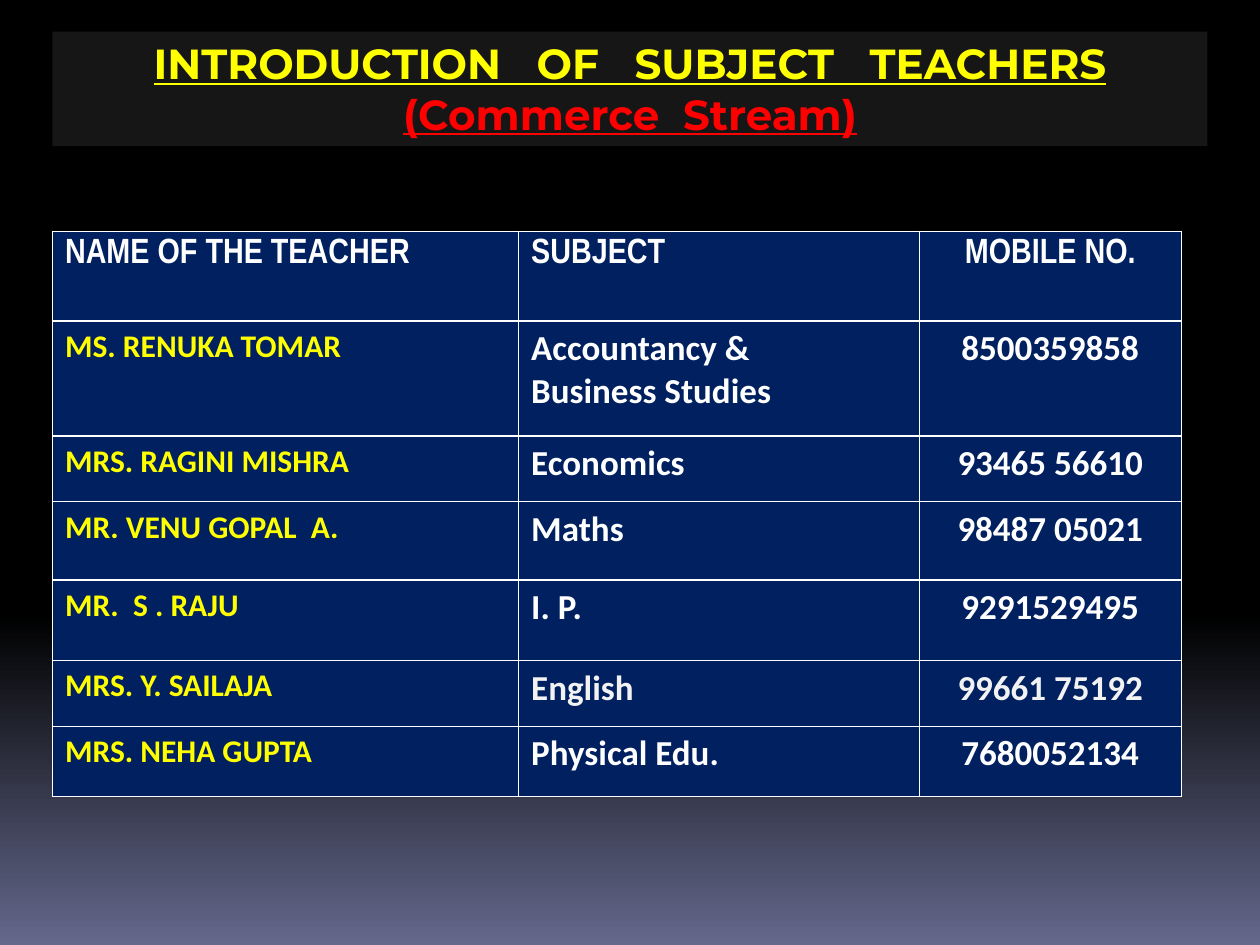
from dataclasses import dataclass

from lxml import etree
from pptx import Presentation
from pptx.dml.color import RGBColor
from pptx.enum.text import MSO_ANCHOR, MSO_AUTO_SIZE, PP_ALIGN
from pptx.oxml.ns import qn
from pptx.util import Pt

LEFT, CENTER = PP_ALIGN.LEFT, PP_ALIGN.CENTER
TOP = MSO_ANCHOR.TOP
NO_FIT = MSO_AUTO_SIZE.NONE

# Colours
BLACK, WHITE, PALE = "000000", "FFFFFF", "F2F2F2"
YELLOW, RED = "FFFF00", "FF0000"
NAVY, CHARCOAL, SLATE = "002060", "161616", "64688B"

TITLE_ONLY = 5
LEFT_EDGE = 30


@dataclass
class Column:
    heading: str
    width: float
    size: float
    align: PP_ALIGN


@dataclass
class Teacher:
    name: str
    subject: str
    mobile: str
    height: float
    color: str = WHITE


# Table content
COLUMNS = [
    Column("NAME OF THE TEACHER", 266.4, 18, LEFT),
    Column("SUBJECT", 229, 20, LEFT),
    Column("MOBILE NO.", 149.7, 20, CENTER),
]
HEADING_HEIGHT = 51.25
TEACHERS = [
    Teacher("MS. RENUKA TOMAR", "Accountancy &\nBusiness Studies", "8500359858", 65.6),
    Teacher("MRS. RAGINI MISHRA", "Economics", "93465 56610", 37.7),
    Teacher("MR. VENU GOPAL  A.", "Maths", "98487 05021", 44.7),
    Teacher("MR.  S . RAJU", "I. P.", "9291529495", 46),
    Teacher("MRS. Y. SAILAJA", "English", "99661 75192", 37.7, PALE),
    Teacher("MRS. NEHA GUPTA", "Physical Edu.", "7680052134", 40.2),
]


def rgb(value: str) -> RGBColor:
    return RGBColor.from_string(value)


def format_para(para, font: str, size: float, color: str, align: PP_ALIGN,
                underline: bool = False) -> None:
    para.alignment = align
    for span in para.runs:
        span.font.name = font
        span.font.size = Pt(size)
        span.font.bold = True
        span.font.underline = underline
        span.font.color.rgb = rgb(color)


def add_borders(cell, color: str, width: float) -> None:
    properties = cell._tc.get_or_add_tcPr()
    for side in ("a:lnL", "a:lnR", "a:lnT", "a:lnB"):
        line = etree.SubElement(properties, qn(side), w=str(Pt(width)))
        fill = etree.SubElement(line, qn("a:solidFill"))
        etree.SubElement(fill, qn("a:srgbClr"), val=color)


def fill_cell(cell, text: str, font: str, size: float, color: str,
              align: PP_ALIGN) -> None:
    # Borders must precede the fill in the cell properties
    add_borders(cell, WHITE, 1)
    cell.fill.solid()
    cell.fill.fore_color.rgb = rgb(NAVY)
    cell.vertical_anchor = TOP
    cell.text_frame.text = text
    for para in cell.text_frame.paragraphs:
        format_para(para, font, size, color, align)


def paint_background(slide) -> None:
    fill = slide.background.fill
    fill.gradient()
    fill.gradient_angle = 270
    for stop, position, color in zip(fill.gradient_stops, (0.65, 1), (BLACK, SLATE)):
        stop.position = position
        stop.color.rgb = rgb(color)


def add_title(slide) -> None:
    title = slide.shapes.title
    title.left, title.top = Pt(LEFT_EDGE), Pt(18)
    title.width, title.height = Pt(660), Pt(65.5)
    title.fill.solid()
    title.fill.fore_color.rgb = rgb(CHARCOAL)
    frame = title.text_frame
    frame.text = "INTRODUCTION   OF   SUBJECT   TEACHERS\n(Commerce  Stream)"
    frame.auto_size = NO_FIT
    frame.vertical_anchor = TOP
    for para, color in zip(frame.paragraphs, (YELLOW, RED)):
        format_para(para, "Montserrat", 24, color, CENTER, underline=True)


def add_teacher_table(slide) -> None:
    heights = [HEADING_HEIGHT] + [teacher.height for teacher in TEACHERS]
    width = sum(column.width for column in COLUMNS)
    table = slide.shapes.add_table(
        len(heights), len(COLUMNS), Pt(LEFT_EDGE), Pt(132.2), Pt(width), Pt(sum(heights))
    ).table
    table.first_row = table.horz_banding = False
    for row, height in zip(table.rows, heights):
        row.height = Pt(height)

    # Heading row
    for index, column in enumerate(COLUMNS):
        table.columns[index].width = Pt(column.width)
        fill_cell(table.cell(0, index), column.heading, "Arial Narrow", 20,
                  WHITE, column.align)

    # One row per teacher
    for row_index, teacher in enumerate(TEACHERS, start=1):
        texts = (teacher.name, teacher.subject, teacher.mobile)
        colors = (YELLOW, teacher.color, teacher.color)
        for index, (column, text, color) in enumerate(zip(COLUMNS, texts, colors)):
            fill_cell(table.cell(row_index, index), text, "Calibri",
                      column.size, color, column.align)


def main() -> None:
    deck = Presentation()
    deck.slide_width, deck.slide_height = Pt(720), Pt(540)
    slide = deck.slides.add_slide(deck.slide_layouts[TITLE_ONLY])
    paint_background(slide)
    add_title(slide)
    add_teacher_table(slide)
    deck.save("out.pptx")


if __name__ == "__main__":
    main()
